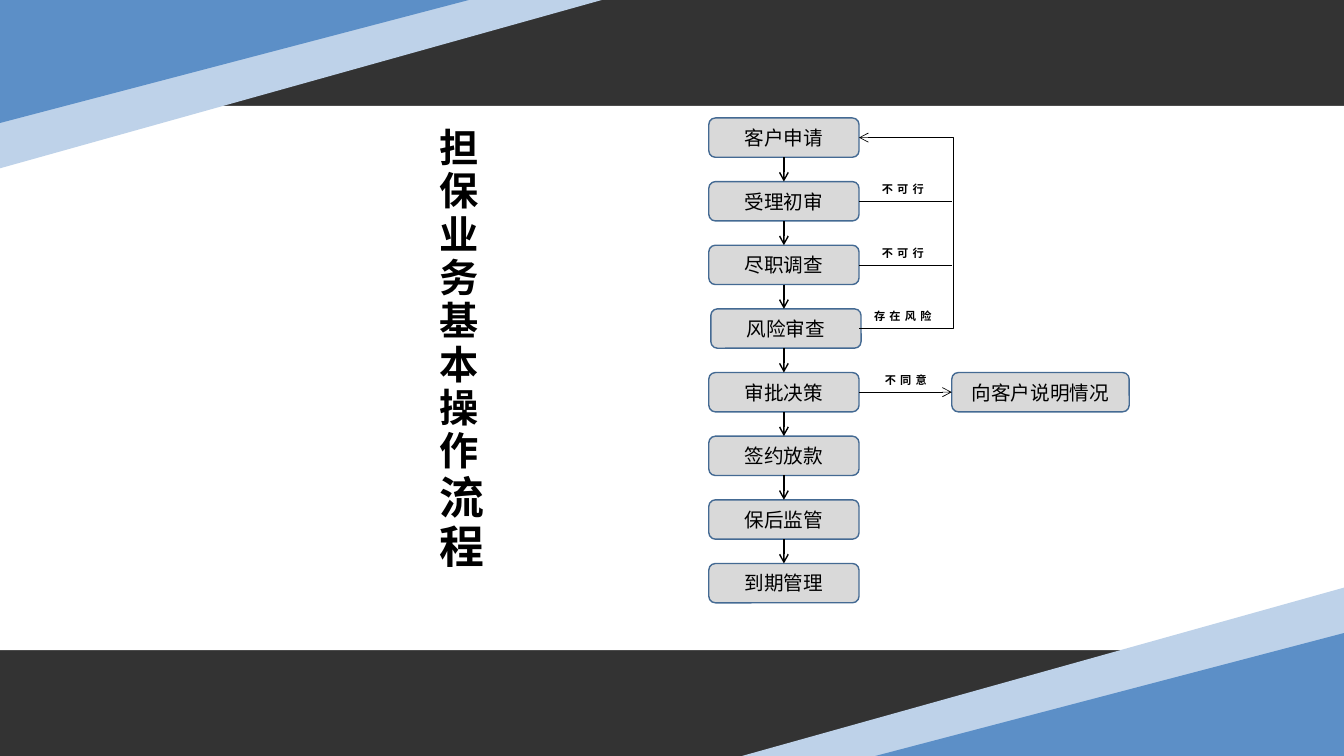
from dataclasses import dataclass

from lxml import etree
from pptx import Presentation, util as u
from pptx.dml import color
from pptx.enum import shapes, text
from pptx.oxml import ns


@dataclass(frozen=True)
class Theme:
    font: str = "Noto Sans CJK SC"
    dark: str = "333333"
    white: str = "FFFFFF"
    pale: str = "BED2E9"
    blue: str = "5C8FC7"
    grey: str = "D9D9D9"
    edge: str = "446A93"
    ink: str = "000000"
    title: int = 28
    ending: int = 32
    step: int = 14
    label: int = 8
    thick: float = 1
    thin: float = 0.5


@dataclass(frozen=True)
class Step:
    name: str
    row: int
    left: float
    width: float = 1.49


@dataclass(frozen=True)
class Branch:
    label: str
    row: int
    left: float = 8.53


THEME = Theme()
WIDE, HIGH = 13.33, 7.5

# Grid of the flow chart: eight rows, one main column, one side column
TOP, LAST, BOX = 1.17, 5.59, 0.39
MAIN, SIDE, RIGHT = 7.03, 9.44, 8.52
NAMES = ["客户申请", "受理初审", "尽职调查", "风险审查",
         "审批决策", "签约放款", "保后监管", "到期管理"]
PITCH = (LAST - TOP) / (len(NAMES) - 1)
RISK, DECIDE = 3, 4
STEPS = [Step(name, row, MAIN + (0.02 if row == RISK else 0))
         for row, name in enumerate(NAMES)]
STEPS.append(Step("向客户说明情况", DECIDE, SIDE, 1.76))
BRANCHES = [Branch("不可行", 1), Branch("不可行", 2),
            Branch("存在风险", RISK), Branch("不同意", DECIDE, 8.56)]


def top(row: int) -> float:
    return TOP + row * PITCH


def mid(row: int) -> float:
    return top(row) + BOX / 2


def rgb(code: str) -> color.RGBColor:
    return color.RGBColor.from_string(code)


def style(run, size: float, bold: bool = False, gap: int = 0) -> None:
    run.font.size = u.Pt(size)
    run.font.bold = bold
    run.font.color.rgb = rgb(THEME.ink)
    run.font.name = THEME.font
    props = run._r.get_or_add_rPr()
    etree.SubElement(props, ns.qn("a:ea")).set("typeface", THEME.font)
    if gap:
        props.set("spc", str(gap * 100))


def write(shape, words: str, size: float, bold: bool = False, gap: int = 0):
    frame = shape.text_frame
    frame.word_wrap = True
    frame.vertical_anchor = text.MSO_ANCHOR.MIDDLE
    frame.text = words
    para = frame.paragraphs[0]
    para.alignment = text.PP_ALIGN.CENTER
    style(para.runs[0], size, bold, gap)
    return para


def block(slide, kind, box: tuple, fill: str, edge: str = ""):
    shape = slide.shapes.add_shape(kind, *map(u.Inches, box))
    shape.shadow.inherit = False
    shape.fill.solid()
    shape.fill.fore_color.rgb = rgb(fill)
    if edge:
        shape.line.color.rgb = rgb(edge)
        shape.line.width = u.Pt(THEME.thick)
    else:
        shape.line.fill.background()
    return shape


def outline(slide, points: list, close: bool):
    dots = [(u.Inches(x), u.Inches(y)) for x, y in points]
    pen = slide.shapes.build_freeform(*dots[0])
    pen.add_line_segments(dots[1:], close=close)
    shape = pen.convert_to_shape()
    shape.shadow.inherit = False
    return shape


def stroke(shape, width: float, arrow: bool) -> None:
    shape.line.color.rgb = rgb(THEME.ink)
    shape.line.width = u.Pt(width)
    if arrow:
        line = shape.element.spPr.find(ns.qn("a:ln"))
        etree.SubElement(line, ns.qn("a:tailEnd")).set("type", "arrow")


def link(slide, start: tuple, end: tuple, width: float, arrow: bool) -> None:
    line = slide.shapes.add_connector(
        shapes.MSO_CONNECTOR.STRAIGHT, *map(u.Inches, start + end))
    stroke(line, width, arrow)
    etree.SubElement(line.element.spPr, ns.qn("a:effectLst"))


def corner(slide, flip: bool) -> None:
    band = [(0, 1.67), (0, 0.12), (2.91, 0), (5.97, 0)]
    wide, high = 4.65, 1.22
    if flip:
        band = [(WIDE - x, HIGH - y) for x, y in band]
    shape = outline(slide, band, True)
    shape.fill.solid()
    shape.fill.fore_color.rgb = rgb(THEME.pale)
    shape.line.fill.background()
    spot = (WIDE - wide, HIGH - high) if flip else (0, 0)
    wedge = block(slide, shapes.MSO_SHAPE.ISOSCELES_TRIANGLE,
                  (*spot, wide, high), THEME.blue)
    wedge.adjustments[0] = 1
    wedge.rotation = 0 if flip else 180


def title(slide) -> None:
    box = slide.shapes.add_textbox(*map(u.Inches, (3.12, 1.17, 2.89, 4.81)))
    para = write(box, "担保业务基本操作", THEME.title, True, 3)
    run = para.add_run()
    run.text = "流程"
    style(run, THEME.ending, True, 3)
    box.element.txBody.bodyPr.set("vert", "eaVert")


def flow(slide) -> None:
    # Steps
    for step in STEPS:
        shape = block(slide, shapes.MSO_SHAPE.ROUNDED_RECTANGLE,
                      (step.left, top(step.row), step.width, BOX),
                      THEME.grey, THEME.edge)
        write(shape, step.name, THEME.step)

    # Arrows down the main column
    axis = MAIN + STEPS[0].width / 2
    for row in range(len(NAMES) - 1):
        link(slide, (axis, top(row) + BOX), (axis, top(row + 1)), THEME.thick, True)

    # Way back to the first step
    back = outline(slide, [(RIGHT, mid(RISK)), (SIDE + 0.02, mid(RISK)),
                           (SIDE + 0.02, mid(0)), (RIGHT, mid(0))], False)
    back.fill.background()
    stroke(back, THEME.thin, True)

    # Side branches and their labels
    for branch in BRANCHES:
        level = mid(branch.row)
        if branch.row != RISK:
            link(slide, (RIGHT, level), (SIDE, level), THEME.thin,
                 branch.row == DECIDE)
        box = slide.shapes.add_textbox(
            *map(u.Inches, (branch.left, top(branch.row) - 0.07, 0.85, 0.26)))
        write(box, branch.label, THEME.label, True, 3).line_spacing = 1.2


def main() -> None:
    deck = Presentation()
    deck.slide_width, deck.slide_height = u.Inches(WIDE), u.Inches(HIGH)
    slide = deck.slides.add_slide(deck.slide_layouts[6])

    # Backdrop
    slide.background.fill.solid()
    slide.background.fill.fore_color.rgb = rgb(THEME.dark)
    block(slide, shapes.MSO_SHAPE.RECTANGLE,
          (0, HIGH * 0.14, WIDE, HIGH * 0.72), THEME.white)
    for flip in (False, True):
        corner(slide, flip)

    title(slide)
    flow(slide)
    deck.save("out.pptx")


if __name__ == "__main__":
    main()
